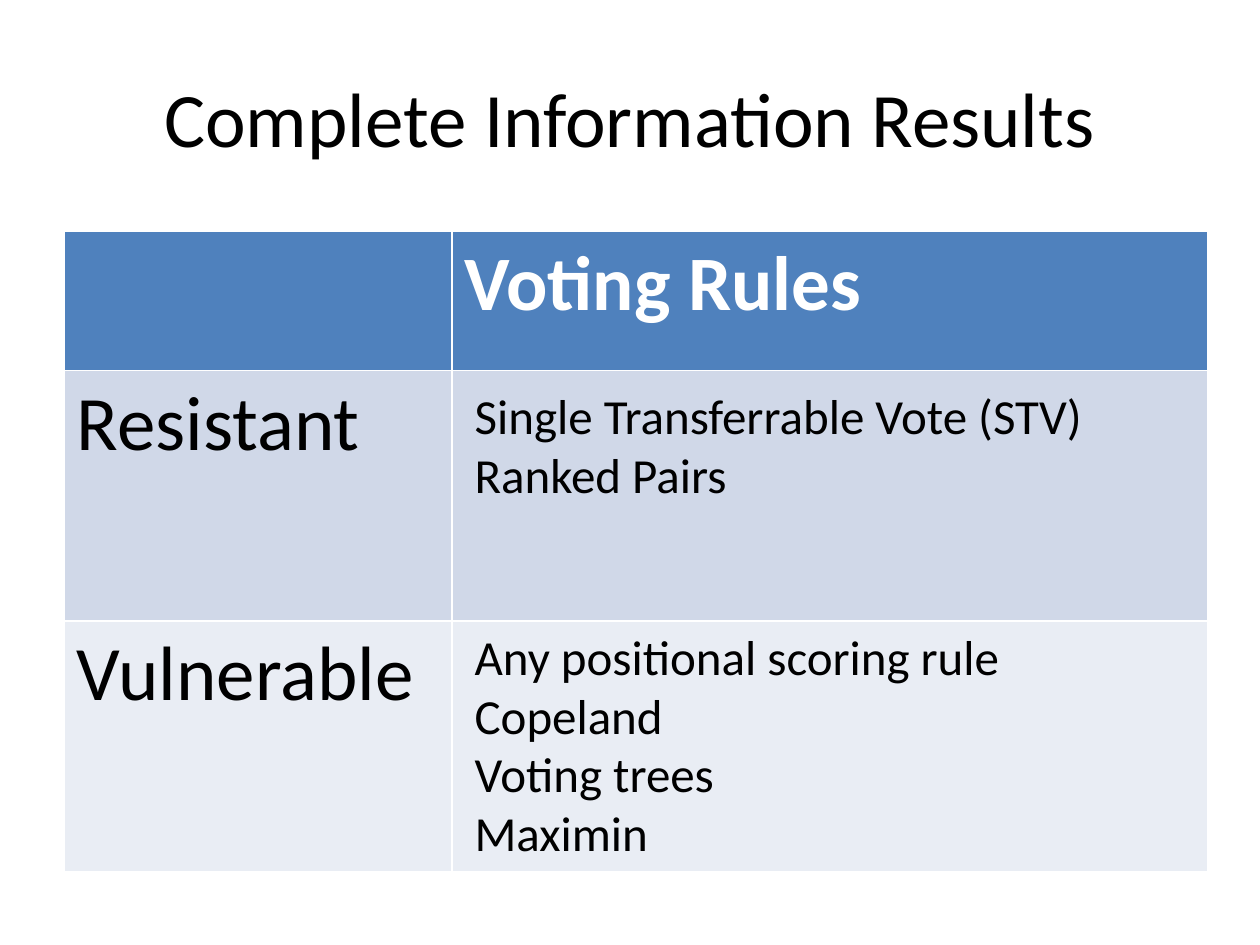
from dataclasses import dataclass

from pptx import Presentation
from pptx.dml.color import RGBColor
from pptx.enum.text import MSO_ANCHOR, MSO_AUTO_SIZE, PP_ALIGN
from pptx.util import Cm, Pt

CENTER = PP_ALIGN.CENTER
MIDDLE = MSO_ANCHOR.MIDDLE
FIT_SHAPE = MSO_AUTO_SIZE.SHAPE_TO_FIT_TEXT
TITLE_ONLY = 5


@dataclass(frozen=True)
class Theme:
    font: str = "Calibri"
    ink: RGBColor = RGBColor(0x00, 0x00, 0x00)
    header_ink: RGBColor = RGBColor(0xFF, 0xFF, 0xFF)
    header_fill: RGBColor = RGBColor(0x4F, 0x81, 0xBD)
    resistant_fill: RGBColor = RGBColor(0xD0, 0xD8, 0xE8)
    vulnerable_fill: RGBColor = RGBColor(0xE9, 0xED, 0xF4)
    heading_size: Pt = Pt(44)
    rule_size: Pt = Pt(28)


THEME = Theme()


def add_text(paragraph, text, size, color, bold=False):
    run = paragraph.add_run()
    run.text = text
    run.font.name = THEME.font
    run.font.size = size
    run.font.bold = bold
    run.font.color.rgb = color


deck = Presentation()
deck.slide_width, deck.slide_height = Cm(25.4), Cm(19.05)
slide = deck.slides.add_slide(deck.slide_layouts[TITLE_ONLY])

# Title
title = slide.shapes.title
title.left, title.top, title.width, title.height = Cm(1.27), Cm(0.76), Cm(22.86), Cm(3.18)
title.text_frame.vertical_anchor = MIDDLE
heading = title.text_frame.paragraphs[0]
heading.alignment = CENTER
add_text(heading, "Complete Information Results", THEME.heading_size, THEME.ink)

# Table: the built-in style supplies the white rules between cells
column_widths = [Cm(7.82), Cm(15.24)]
row_heights = [Cm(2.81), Cm(5.05), Cm(5.05)]
table_rows = [
    (["", "Voting Rules"], THEME.header_fill, THEME.header_ink, True),
    (["Resistant", ""], THEME.resistant_fill, THEME.ink, False),
    (["Vulnerable", ""], THEME.vulnerable_fill, THEME.ink, False),
]
results = slide.shapes.add_table(
    len(table_rows), len(column_widths), Cm(1.29), Cm(4.66),
    sum(column_widths), sum(row_heights),
).table
for column, width in zip(results.columns, column_widths):
    column.width = width
for row, height, (labels, fill, ink, bold) in zip(results.rows, row_heights, table_rows):
    row.height = height
    for cell, label in zip(row.cells, labels):
        cell.fill.solid()
        cell.fill.fore_color.rgb = fill
        if label:
            add_text(cell.text_frame.paragraphs[0], label, THEME.heading_size, ink, bold)

# Voting rules laid over the right-hand cells
rule_lists = [
    (Cm(7.65), Cm(13.77), Cm(3.43), True,
     ["Single Transferrable Vote (STV)", "Ranked Pairs"]),
    (Cm(12.5), Cm(11.2), Cm(5.05), False,
     ["Any positional scoring rule", "Copeland", "Voting trees", "Maximin"]),
]
for top, width, height, wraps, rules in rule_lists:
    rule_frame = slide.shapes.add_textbox(Cm(9.32), top, width, height).text_frame
    rule_frame.word_wrap = wraps
    rule_frame.auto_size = FIT_SHAPE
    for index, rule in enumerate(rules):
        line = rule_frame.add_paragraph() if index else rule_frame.paragraphs[0]
        add_text(line, rule, THEME.rule_size, THEME.ink)

deck.save("out.pptx")
